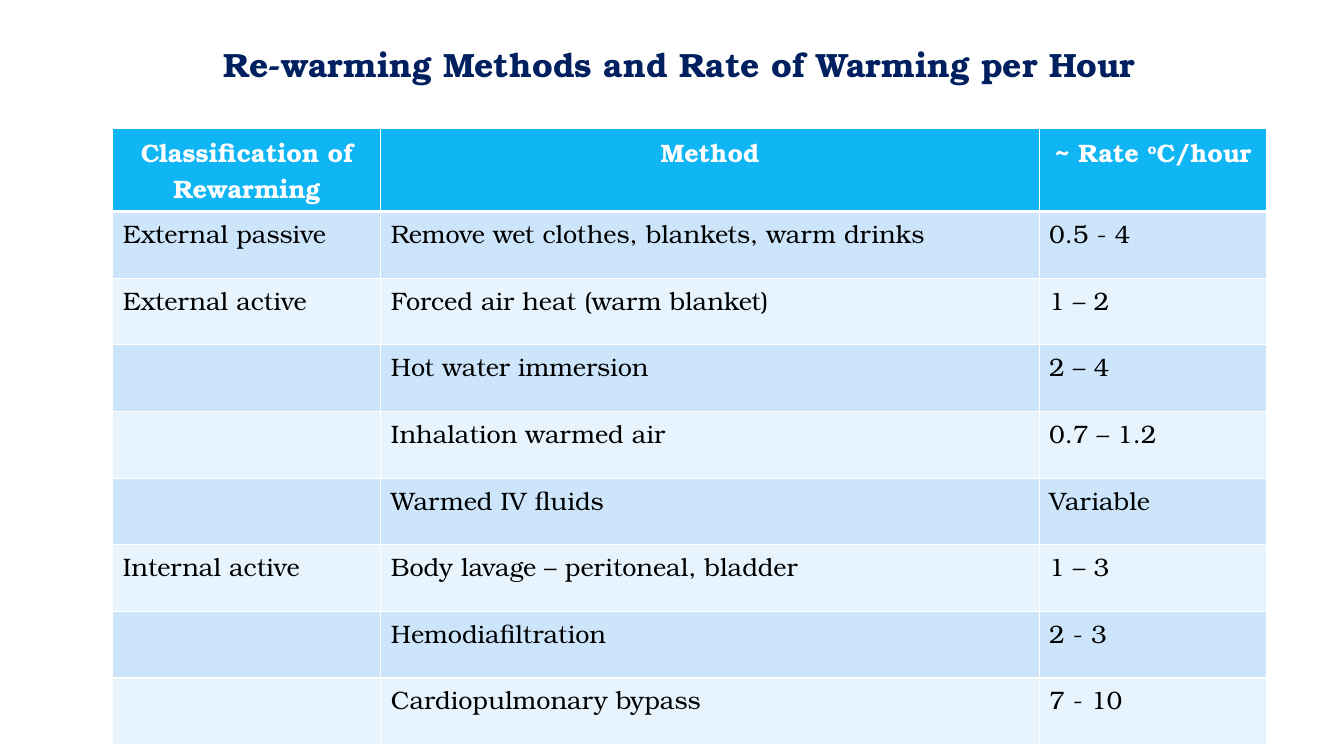
from pptx import Presentation
from pptx.dml.color import RGBColor
from pptx.enum.text import MSO_ANCHOR, MSO_AUTO_SIZE, PP_ALIGN
from pptx.oxml import parse_xml
from pptx.oxml.ns import nsdecls
from pptx.util import Pt

CENTER = PP_ALIGN.CENTER
LEFT = PP_ALIGN.LEFT
TOP = MSO_ANCHOR.TOP
NO_AUTOFIT = MSO_AUTO_SIZE.NONE

FONT = "TeX Gyre Bonum"
NAVY = RGBColor(0x00, 0x20, 0x60)
WHITE = RGBColor(0xFF, 0xFF, 0xFF)
BLACK = RGBColor(0x00, 0x00, 0x00)
HEADER_BLUE = RGBColor(0x10, 0xB6, 0xF4)
BANDS = (RGBColor(0xCC, 0xE5, 0xFB), RGBColor(0xE7, 0xF3, 0xFD))

TITLE_ONLY = 5
COLUMN_WIDTHS = (191.5, 470.2, 162.7)
ROW_HEIGHT = 47.6

HEADINGS = ("Classification of Rewarming", "Method", "~ Rate ^o^C/hour")
METHODS = (
    ("External passive", "Remove wet clothes, blankets, warm drinks", "0.5 - 4"),
    ("External active", "Forced air heat (warm blanket)", "1 – 2"),
    ("", "Hot water immersion", "2 – 4"),
    ("", "Inhalation warmed air", "0.7 – 1.2"),
    ("", "Warmed IV fluids", "Variable"),
    ("Internal active", "Body lavage – peritoneal, bladder", "1 – 3"),
    ("", "Hemodiafiltration", "2 - 3"),
    ("", "Cardiopulmonary bypass", "7 - 10"),
)


def add_spans(para, text, size, color, bold, align):
    para.alignment = align
    for index, part in enumerate(text.split("^")):
        if not part:
            continue
        span = para.add_run()
        span.text = part
        span.font.name = FONT
        span.font.size = Pt(size)
        span.font.bold = bold
        span.font.color.rgb = color
        if index % 2:
            span.font._element.set("baseline", "30000")


def add_borders(cell, bottom_width):
    properties = cell._tc.get_or_add_tcPr()
    for side, width in (("L", 1), ("R", 1), ("T", 1), ("B", bottom_width)):
        properties.append(parse_xml(
            f'<a:ln{side} {nsdecls("a")} w="{Pt(width)}"><a:solidFill>'
            f'<a:srgbClr val="{WHITE}"/></a:solidFill></a:ln{side}>'))


def fill_row(cells, texts, fill, color, bold, align, bottom_width):
    for cell, text in zip(cells, texts):
        add_borders(cell, bottom_width)
        cell.fill.solid()
        cell.fill.fore_color.rgb = fill
        add_spans(cell.text_frame.paragraphs[0], text, 18, color, bold, align)


def set_title(page, text):
    box = page.shapes.title
    box.left, box.top, box.width, box.height = Pt(129.6), Pt(27.4), Pt(711.4), Pt(36)
    frame = box.text_frame
    frame.word_wrap = True
    frame.auto_size = NO_AUTOFIT
    frame.vertical_anchor = TOP
    add_spans(frame.paragraphs[0], text, 24, NAVY, True, CENTER)


def add_methods_table(page):
    row_count = len(METHODS) + 1
    table = page.shapes.add_table(
        row_count, len(HEADINGS), Pt(80.6), Pt(91.4),
        Pt(sum(COLUMN_WIDTHS)), Pt(ROW_HEIGHT * row_count)).table
    for column, width in zip(table.columns, COLUMN_WIDTHS):
        column.width = Pt(width)
    for row in table.rows:
        row.height = Pt(ROW_HEIGHT)
    fill_row(table.rows[0].cells, HEADINGS, HEADER_BLUE, WHITE, True, CENTER, 3)
    for index, texts in enumerate(METHODS):
        fill_row(table.rows[index + 1].cells, texts, BANDS[index % 2],
                 BLACK, False, LEFT, 1)


def main():
    deck = Presentation()
    deck.slide_width, deck.slide_height = Pt(960), Pt(540)
    page = deck.slides.add_slide(deck.slide_layouts[TITLE_ONLY])
    add_methods_table(page)
    set_title(page, "Re-warming Methods and Rate of Warming per Hour")
    deck.save("out.pptx")


if __name__ == "__main__":
    main()
